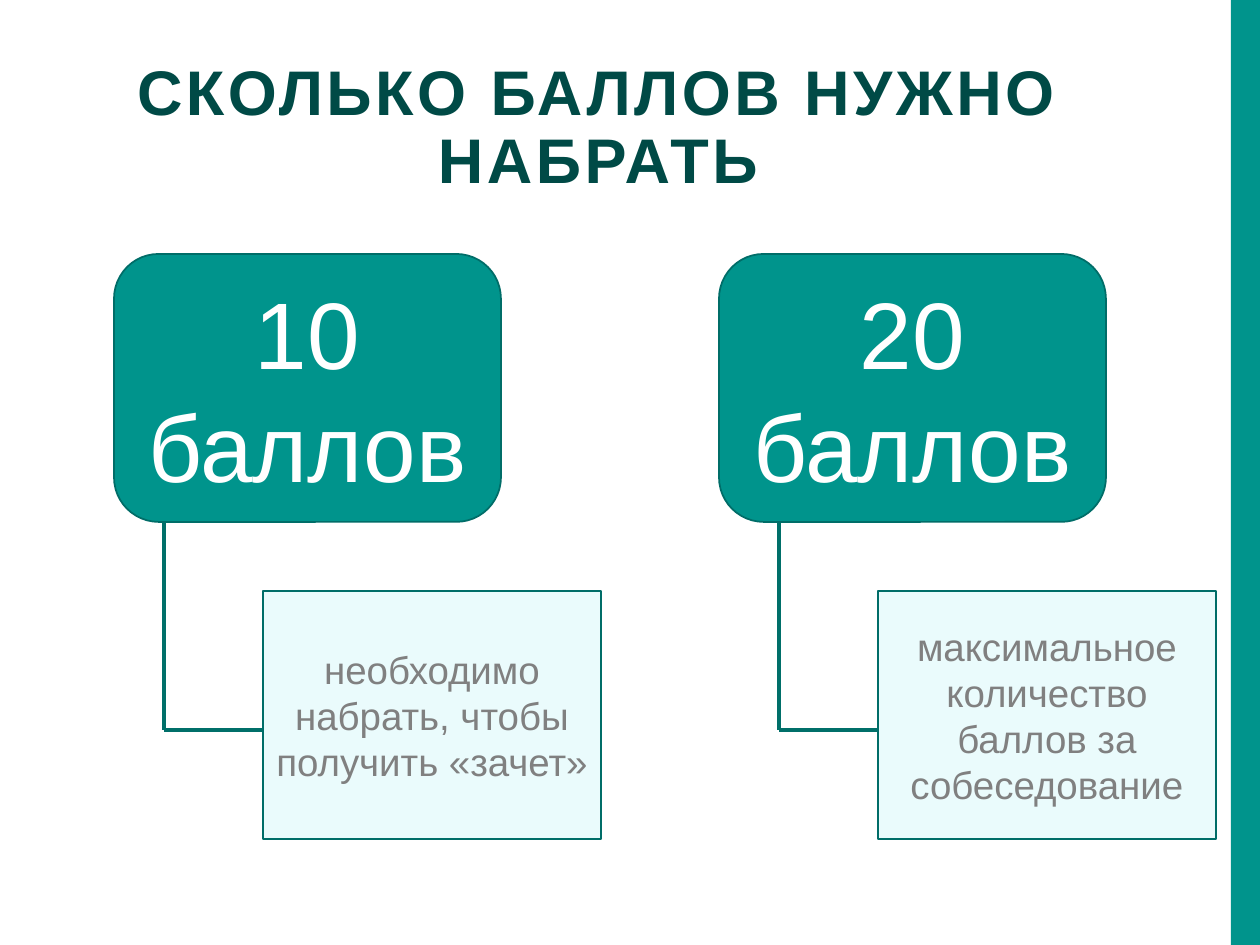
from lxml import etree
from pptx import Presentation
from pptx.dml import color
from pptx.enum import shapes, text
from pptx.oxml import ns
from pptx.util import Emu, Pt

SCALE = 914400 // 126
COLORS = {
    "teal": "00948C",
    "outline": "006D68",
    "branch": "006F69",
    "title": "004A46",
    "pale": "EAFBFC",
    "gray": "808080",
    "white": "FFFFFF",
}


def px(*lengths):
    """Turn pixel lengths into EMU."""
    return [Emu(length * SCALE) for length in lengths]


def rgb(name):
    """Look up a colour by its name."""
    return color.RGBColor.from_string(COLORS[name])


def write(frame, content, size, ink, bold=False, tracking=None, leading=None,
          anchor=text.MSO_ANCHOR.MIDDLE):
    """Fill a text frame with centred paragraphs, one for each line of content."""
    frame.text = content
    frame.word_wrap = True
    frame.auto_size = text.MSO_AUTO_SIZE.NONE
    frame.vertical_anchor = anchor
    for para in frame.paragraphs:
        para.alignment = text.PP_ALIGN.CENTER
        para.line_spacing = leading
        for span in para.runs:
            span.font.name = "Arial"
            span.font.size = Pt(size)
            span.font.bold = bold
            span.font.color.rgb = rgb(ink)
            if tracking:
                span.font._element.set("spc", str(tracking * 100))


def add_box(page, kind, bounds, fill, outline=None):
    """Draw a filled preset shape without a shadow."""
    box = page.shapes.add_shape(kind, *px(*bounds))
    box.shadow.inherit = False
    box.fill.solid()
    box.fill.fore_color.rgb = rgb(fill)
    if outline:
        box.line.color.rgb = rgb(outline)
        box.line.width = Pt(1)
    else:
        box.line.fill.background()
    return box


def add_line(page, start, end):
    """Draw one straight piece of a branch."""
    line = page.shapes.add_connector(
        shapes.MSO_CONNECTOR.STRAIGHT, *px(*start, *end))
    line.line.color.rgb = rgb("branch")
    line.line.width = Pt(2)
    etree.SubElement(line._element.spPr, ns.qn("a:effectLst"))


def add_title(page, content):
    """Place and format the slide title."""
    title = page.shapes.title
    title.left, title.top, title.width, title.height = px(0, 55, 1196, 118)
    write(title.text_frame, content, 36, "title", bold=True, tracking=2,
          leading=0.9, anchor=text.MSO_ANCHOR.TOP)


def add_score(page, score_left, note_left, score, note):
    """Draw a score, its explanation and the branch that joins them."""
    kinds = shapes.MSO_SHAPE
    score_box = add_box(page, kinds.ROUNDED_RECTANGLE,
                        (score_left, 254, 387, 268), "teal", "outline")
    write(score_box.text_frame, score, 54, "white")
    note_box = add_box(page, kinds.RECTANGLE,
                       (note_left, 591, 338, 248), "pale", "outline")
    write(note_box.text_frame, note, 22, "gray")
    corner = (note_left - 99, 730)
    add_line(page, (corner[0], 522), corner)
    add_line(page, corner, (note_left, 730))


def main():
    """Build the slide and save it."""
    deck = Presentation()
    deck.slide_width, deck.slide_height = px(1260, 945)
    page = deck.slides.add_slide(deck.slide_layouts[5])
    add_box(page, shapes.MSO_SHAPE.RECTANGLE, (1231, 0, 29, 945), "teal")
    add_title(page, "СКОЛЬКО БАЛЛОВ НУЖНО НАБРАТЬ")
    add_score(page, 114, 263, "10 баллов",
              "необходимо набрать, чтобы получить «зачет»")
    add_score(page, 719, 878, "20\nбаллов",
              "максимальное количество баллов за собеседование")
    deck.save("out.pptx")


if __name__ == "__main__":
    main()
